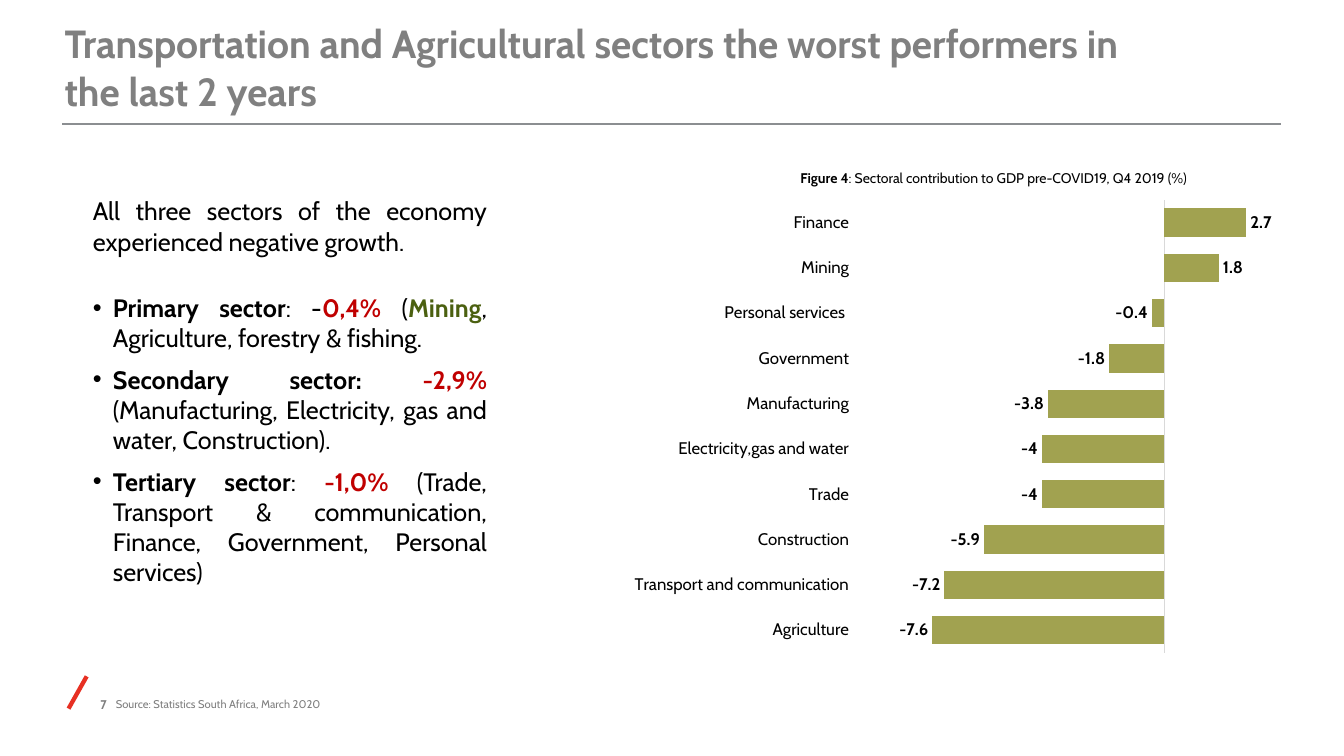
import pptx
import pptx.util
import pptx.chart.data
import pptx.dml.color
import pptx.enum.chart
import pptx.enum.shapes
import pptx.enum.text
import pptx.oxml
import pptx.oxml.ns

Inches = pptx.util.Inches
Pt = pptx.util.Pt
Color = pptx.dml.color.RGBColor
Align = pptx.enum.text.PP_ALIGN
Anchor = pptx.enum.text.MSO_ANCHOR
qn = pptx.oxml.ns.qn

BLACK = Color(0x00, 0x00, 0x00)
GREY = Color(0x80, 0x80, 0x80)
RULE = Color(0x8B, 0x8E, 0x91)
SLASH = Color(0xE7, 0x30, 0x23)
RED = Color(0xC0, 0x00, 0x00)
GREEN = Color(0x4B, 0x60, 0x10)
OLIVE = Color(0xA1, 0xA2, 0x50)
AXIS = Color(0xD9, 0xD9, 0xD9)

SECTORS = [
    ("Agriculture", -7.6),
    ("Transport and communication", -7.2),
    ("Construction", -5.9),
    ("Trade", -4),
    ("Electricity,gas and water", -4),
    ("Manufacturing", -3.8),
    ("Government", -1.8),
    ("Personal services ", -0.4),
    ("Mining", 1.8),
    ("Finance", 2.7),
]

INTRO = [("All three sectors of the economy experienced negative growth.", BLACK, False)]
POINTS = [
    [("Primary sector", BLACK, True), (": -", BLACK, False), ("0,4%", RED, True),
     (" (", BLACK, False), ("Mining", GREEN, True),
     (", Agriculture, forestry & fishing.", BLACK, False)],
    [("Secondary sector: ", BLACK, True), ("-2,9% ", RED, True),
     ("(Manufacturing, Electricity, gas and water, Construction).", BLACK, False)],
    [("Tertiary sector", BLACK, True), (": ", BLACK, False), ("-1,0% ", RED, True),
     ("(Trade, Transport & communication, Finance, Government, Personal services)",
      BLACK, False)],
]


class Deck:
    face = "Cabin"

    def __init__(self):
        self.show = pptx.Presentation()
        self.show.slide_width = Inches(13.33)
        self.show.slide_height = Inches(7.5)
        self.slide = self.show.slides.add_slide(self.show.slide_layouts[1])

    def style(self, font, size, color, bold=False):
        font.name = self.face
        font.size = Pt(size)
        font.color.rgb = color
        font.bold = bold

    def place(self, shape, box):
        shape.left, shape.top, shape.width, shape.height = map(Inches, box)

    def fill(self, para, parts, size):
        for words, color, bold in parts:
            run = para.add_run()
            run.text = words
            self.style(run.font, size, color, bold)

    def title(self, box, words):
        shape = self.slide.shapes.title
        self.place(shape, box)
        frame = shape.text_frame
        frame.text = words
        frame.auto_size = pptx.enum.text.MSO_AUTO_SIZE.NONE
        frame.vertical_anchor = Anchor.BOTTOM
        frame.margin_left = frame.margin_right = 0
        frame.margin_top = frame.margin_bottom = 0
        para = frame.paragraphs[0]
        para.alignment = Align.LEFT
        self.style(para.runs[0].font, 28, GREY, True)

    def bullet(self, para, sign):
        props = para._p.get_or_add_pPr()
        depth = Inches(0.2) if sign else 0
        props.set("marL", str(depth))
        props.set("indent", str(-depth))
        mark = pptx.oxml.ns.qn("a:buChar" if sign else "a:buNone")
        item = props.makeelement(mark, {"char": sign} if sign else {})
        props.append(item)

    def body(self, box, intro, points):
        shape = self.slide.placeholders[1]
        self.place(shape, box)
        frame = shape.text_frame
        frame.auto_size = pptx.enum.text.MSO_AUTO_SIZE.NONE
        frame.vertical_anchor = Anchor.TOP
        for spot, parts in enumerate([intro] + points):
            para = frame.add_paragraph() if spot else frame.paragraphs[0]
            self.bullet(para, "•" if spot else "")
            para.alignment = Align.JUSTIFY
            para.space_before = Pt((0, 26)[spot] if spot < 2 else 4)
            para.space_after = Pt(4 if spot else 0)
            self.fill(para, parts, 18)

    def text(self, box, parts, size, align=Align.LEFT):
        shape = self.slide.shapes.add_textbox(*map(Inches, box))
        frame = shape.text_frame
        frame.word_wrap = True
        para = frame.paragraphs[0]
        para.alignment = align
        self.fill(para, parts, size)
        return frame

    def line(self, ends, color, width):
        kind = pptx.enum.shapes.MSO_CONNECTOR.STRAIGHT
        link = self.slide.shapes.add_connector(kind, *map(Inches, ends))
        link.line.color.rgb = color
        link.line.width = Pt(width)
        props = link._element.spPr
        props.append(props.makeelement(qn("a:effectLst"), {}))

    def chart(self, box, rows):
        enum = pptx.enum.chart
        data = pptx.chart.data.CategoryChartData()
        data.categories = [name for name, value in rows]
        data.add_series("Series 1", [value for name, value in rows])
        kind = enum.XL_CHART_TYPE.BAR_CLUSTERED
        chart = self.slide.shapes.add_chart(kind, *map(Inches, box), data).chart
        self.style(chart.font, 10, BLACK)
        chart.has_title = False
        chart.has_legend = False

        names = chart.category_axis
        names.tick_label_position = enum.XL_TICK_LABEL_POSITION.LOW
        names.major_tick_mark = enum.XL_TICK_MARK.NONE
        names.has_major_gridlines = False
        names.format.line.color.rgb = AXIS
        names.format.line.width = Pt(0.75)
        self.style(names.tick_labels.font, 12, BLACK)

        scale = chart.value_axis
        scale.minimum_scale, scale.maximum_scale = -10, 4
        scale.major_unit = 2
        scale.has_major_gridlines = False
        scale.visible = False

        plot = chart.plots[0]
        plot.gap_width = 60
        plot.vary_by_categories = False
        bars = plot.series[0]
        bars.invert_if_negative = False
        bars.format.fill.solid()
        bars.format.fill.fore_color.rgb = OLIVE
        labels = bars.data_labels
        labels.show_value = True
        labels.position = enum.XL_LABEL_POSITION.OUTSIDE_END
        self.style(labels.font, 12, BLACK, True)


def main():
    deck = Deck()
    deck.title((0.64, 0.34, 10.71, 0.79),
               "Transportation and Agricultural sectors the worst performers "
               "in the last 2 years")
    deck.line((0.62, 1.23, 12.71, 1.23), RULE, 1.65)
    deck.body((0.82, 1.89, 4.11, 4.68), INTRO, POINTS)
    deck.chart((6.16, 1.89, 6.73, 4.68), SECTORS)
    deck.text((7.84, 1.63, 6.39, 0.28),
              [("Figure 4", BLACK, True),
               (": Sectoral contribution to GDP pre-COVID19, Q4 2019 (%)", BLACK, False)],
              10)
    deck.line((0.68, 7.03, 0.86, 6.71), SLASH, 3.05)
    page = deck.text((0.49, 6.88, 0.57, 0.23), [("7", GREY, True)], 9, Align.RIGHT)
    page.vertical_anchor = Anchor.BOTTOM
    page.margin_left = page.margin_right = page.margin_top = 0
    deck.text((1.05, 6.87, 5.8, 0.24),
              [("Source: Statistics South Africa, March 2020", GREY, False)], 8)
    deck.show.save("out.pptx")


if __name__ == "__main__":
    main()
